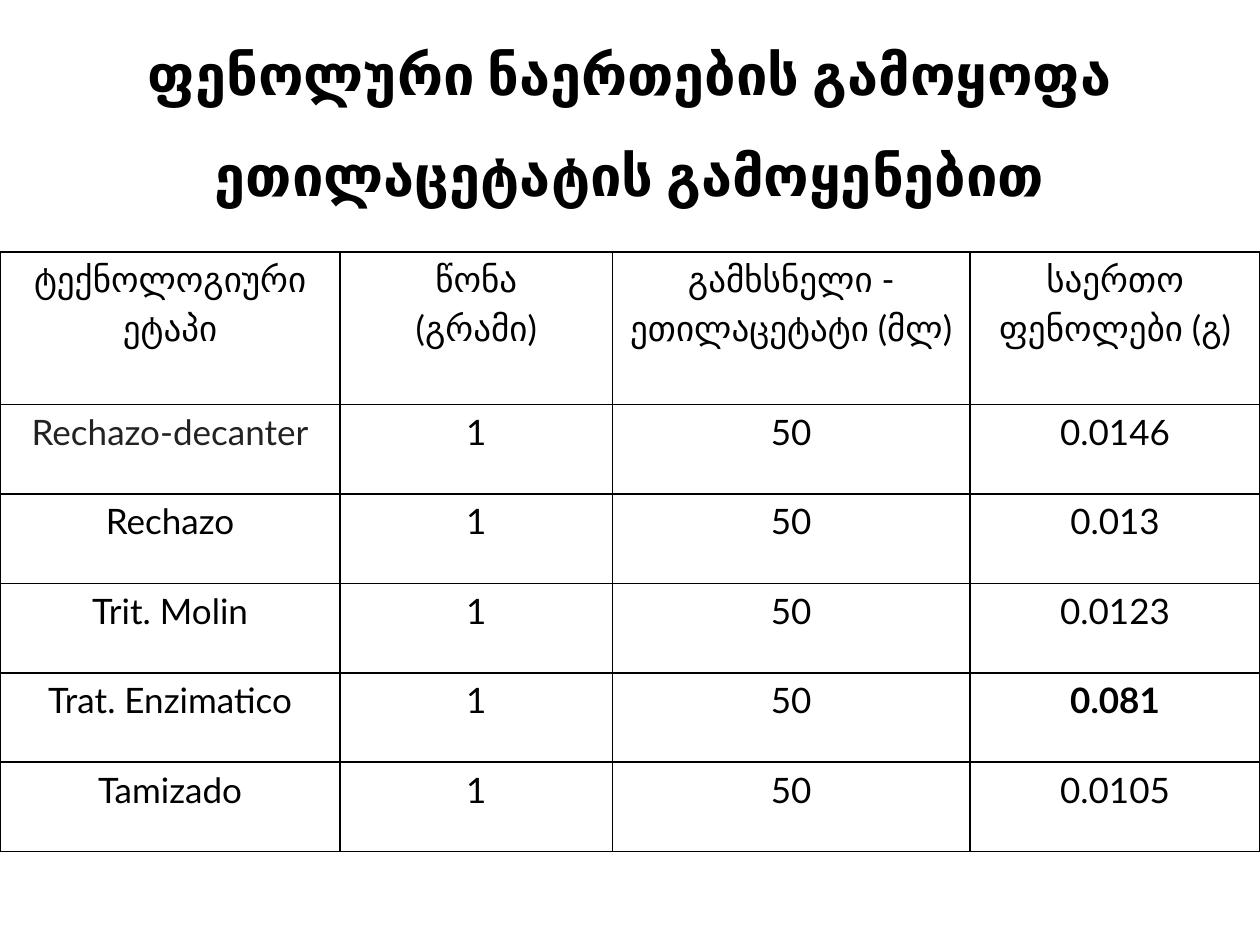
from dataclasses import dataclass

from lxml.etree import SubElement
from pptx import Presentation
from pptx.dml.color import RGBColor
from pptx.enum.text import MSO_AUTO_SIZE, PP_ALIGN
from pptx.oxml.ns import qn
from pptx.slide import Slide
from pptx.table import Table, _Cell
from pptx.text.text import TextFrame
from pptx.util import Inches, Pt

BLACK = RGBColor(0x00, 0x00, 0x00)
CHARCOAL = RGBColor(0x22, 0x22, 0x22)

TITLE = "ფენოლური ნაერთების გამოყოფა ეთილაცეტატის გამოყენებით"
HEADINGS = (
    "ტექნოლოგიური ეტაპი",
    "წონა\n(გრამი)",
    "გამხსნელი - ეთილაცეტატი (მლ)",
    "საერთო ფენოლები (გ)",
)
COLUMN_SHARES = (0.27, 0.216, 0.284, 0.23)
HEADING_HEIGHT = Inches(1.21)
STAGE_HEIGHT = Inches(0.71)


@dataclass(frozen=True)
class TextStyle:
    font: str
    size: int
    line_spacing: float
    bold: bool = False
    color: RGBColor = BLACK


@dataclass(frozen=True)
class Stage:
    name: str
    phenols: str
    name_color: RGBColor = BLACK
    highlighted: bool = False
    weight: str = "1"
    solvent: str = "50"


STAGES = (
    Stage("Rechazo-decanter", "0.0146", name_color=CHARCOAL),
    Stage("Rechazo", "0.013"),
    Stage("Trit. Molin", "0.0123"),
    Stage("Trat. Enzimatico", "0.081", highlighted=True),
    Stage("Tamizado", "0.0105"),
)


def write_text(frame: TextFrame, text: str, style: TextStyle) -> None:
    frame.text = text
    frame.word_wrap = True
    for para in frame.paragraphs:
        para.alignment = PP_ALIGN.CENTER
        para.line_spacing = style.line_spacing
        for span in para.runs:
            span.font.name = style.font
            span.font.size = Pt(style.size)
            span.font.bold = style.bold
            span.font.color.rgb = style.color


def add_borders(cell: _Cell) -> None:
    properties = cell._tc.get_or_add_tcPr()
    for side in ("lnL", "lnR", "lnT", "lnB"):
        line = SubElement(properties, qn(f"a:{side}"), w=str(Pt(1)))
        fill = SubElement(line, qn("a:solidFill"))
        SubElement(fill, qn("a:srgbClr"), val=str(BLACK))


def fill_cell(cell: _Cell, text: str, bold: bool = False, color: RGBColor = BLACK) -> None:
    cell.margin_left = cell.margin_right = Inches(0.07)
    cell.margin_top = cell.margin_bottom = 0
    add_borders(cell)
    cell.fill.background()
    write_text(cell.text_frame, text, TextStyle("Lato", 20, 1.15, bold, color))


def fill_stage(table: Table, row: int, stage: Stage) -> None:
    fill_cell(table.cell(row, 0), stage.name, color=stage.name_color)
    fill_cell(table.cell(row, 1), stage.weight)
    fill_cell(table.cell(row, 2), stage.solvent)
    fill_cell(table.cell(row, 3), stage.phenols, bold=stage.highlighted)


def add_results(page: Slide, width: int, top: int) -> None:
    height = HEADING_HEIGHT + len(STAGES) * STAGE_HEIGHT
    table = page.shapes.add_table(
        len(STAGES) + 1, len(HEADINGS), 0, top, width, height
    ).table
    table.first_row = table.horz_banding = False
    for column, share in zip(table.columns, COLUMN_SHARES):
        column.width = round(width * share)
    for row in table.rows:
        row.height = STAGE_HEIGHT
    table.rows[0].height = HEADING_HEIGHT
    for column, heading in enumerate(HEADINGS):
        fill_cell(table.cell(0, column), heading)
    for row, stage in enumerate(STAGES, start=1):
        fill_stage(table, row, stage)


def add_title(page: Slide, width: int) -> None:
    box = page.shapes.add_textbox(0, 0, width, Inches(1.64))
    write_text(box.text_frame, TITLE, TextStyle("Calibri", 32, 1.5, bold=True))
    box.text_frame.auto_size = MSO_AUTO_SIZE.SHAPE_TO_FIT_TEXT


def main() -> None:
    deck = Presentation()
    deck.slide_width, deck.slide_height = Inches(10), Inches(7.5)
    page = deck.slides.add_slide(deck.slide_layouts[6])
    add_results(page, deck.slide_width, Inches(2))
    add_title(page, deck.slide_width)
    deck.save("out.pptx")


if __name__ == "__main__":
    main()
